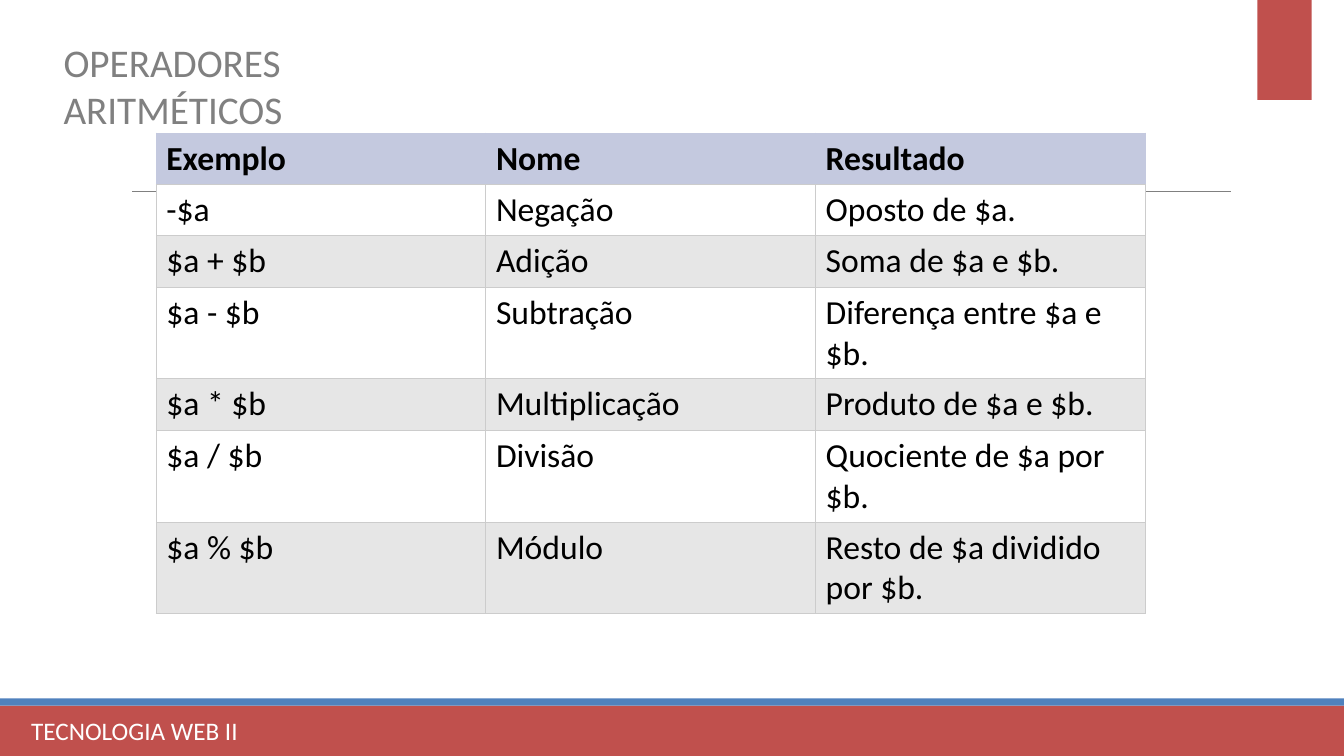
"""Build the slide on arithmetic operators."""
from dataclasses import dataclass

from lxml import etree
from pptx import Presentation
from pptx.dml.color import RGBColor
from pptx.enum import shapes, text
from pptx.oxml import ns
from pptx.util import Inches, Pt


@dataclass(frozen=True)
class Theme:
    font: str = "Calibri"
    red: str = "C0504D"
    blue: str = "4F81BD"
    gray: str = "808080"
    white: str = "FFFFFF"
    black: str = "000000"
    header: str = "C4C9DF"
    band: str = "E6E6E6"
    border: str = "CCCCCC"
    title_size: int = 28
    table_size: int = 24
    footer_size: int = 18


THEME = Theme()
BARS = [
    (0, 7, 13.33, 0.5, THEME.red),
    (0, 6.93, 13.33, 0.07, THEME.blue),
    (12.47, 0, 0.54, 0.99, THEME.red),
]
OPERATORS = [
    ("Exemplo", "Nome", "Resultado"),
    ("-$a", "Negação", "Oposto de $a."),
    ("$a + $b", "Adição", "Soma de $a e $b."),
    ("$a - $b", "Subtração", "Diferença entre $a e $b."),
    ("$a * $b", "Multiplicação", "Produto de $a e $b."),
    ("$a / $b", "Divisão", "Quociente de $a por $b."),
    ("$a % $b", "Módulo", "Resto de $a dividido por $b."),
]
COL_WIDTH, ROW_HEIGHT, TALL_ROW = 3.27, 0.51, 0.91
TWO_LINE_ROWS = {3, 5, 6}


def rgb(color):
    return RGBColor.from_string(color)


def write(tf, content, size, color, bold=False):
    p = tf.paragraphs[0]
    p.alignment = text.PP_ALIGN.LEFT
    r = p.add_run()
    r.text = content
    formats = {"name": THEME.font, "size": Pt(size), "bold": bold}
    for name, value in formats.items():
        setattr(r.font, name, value)
    r.font.color.rgb = rgb(color)


def add_bar(s, left, top, width, height, color):
    sp = s.shapes.add_shape(shapes.MSO_SHAPE.RECTANGLE, Inches(left), Inches(top),
                            Inches(width), Inches(height))
    sp.shadow.inherit = False
    sp.fill.solid()
    sp.fill.fore_color.rgb = rgb(color)
    sp.line.fill.background()


def add_rule(s, left, right, y):
    line = s.shapes.add_connector(shapes.MSO_CONNECTOR.STRAIGHT, Inches(left),
                                  Inches(y), Inches(right), Inches(y))
    line.line.color.rgb = rgb(THEME.gray)
    line.line.width = Pt(0.5)
    etree.SubElement(line.element.spPr, ns.qn("a:effectLst"))


def add_footer(s, content):
    sp = s.shapes.add_textbox(Inches(0.21), Inches(7.05), Inches(7.11), Inches(0.4))
    sp.text_frame.word_wrap = True
    write(sp.text_frame, content, THEME.footer_size, THEME.white)


def set_title(s, content):
    sp = s.shapes.title
    box = {"left": 0.53, "top": 0.33, "width": 4.55, "height": 0.57}
    for name, value in box.items():
        setattr(sp, name, Inches(value))
    tf = sp.text_frame
    formats = {"word_wrap": False, "auto_size": text.MSO_AUTO_SIZE.NONE,
               "vertical_anchor": text.MSO_ANCHOR.TOP}
    for name, value in formats.items():
        setattr(tf, name, value)
    write(tf, content, THEME.title_size, THEME.gray)


def set_borders(cell, side_color):
    tc_pr = cell._tc.get_or_add_tcPr()
    colors = {"lnL": side_color, "lnR": side_color, "lnT": side_color, "lnB": THEME.border}
    for side, color in colors.items():
        ln = etree.SubElement(tc_pr, ns.qn(f"a:{side}"), w=str(Pt(0.75)))
        fill = etree.SubElement(ln, ns.qn("a:solidFill"))
        etree.SubElement(fill, ns.qn("a:srgbClr"), val=color)


def format_cell(cell, content, row):
    header = row == 0
    set_borders(cell, THEME.header if header else THEME.border)
    cell.fill.solid()
    band = THEME.white if row % 2 else THEME.band
    cell.fill.fore_color.rgb = rgb(THEME.header if header else band)
    write(cell.text_frame, content, THEME.table_size, THEME.black, header)


def add_operator_table(s, rows):
    heights = [TALL_ROW if i in TWO_LINE_ROWS else ROW_HEIGHT for i in range(len(rows))]
    cols = len(rows[0])
    table = s.shapes.add_table(len(rows), cols, Inches(1.55), Inches(1.32),
                               Inches(COL_WIDTH * cols), Inches(sum(heights))).table
    table.horz_banding = False
    for col in table.columns:
        col.width = Inches(COL_WIDTH)
    for i, (values, height) in enumerate(zip(rows, heights)):
        table.rows[i].height = Inches(height)
        for j, content in enumerate(values):
            format_cell(table.cell(i, j), content, i)


def main():
    prs = Presentation()
    prs.slide_width, prs.slide_height = Inches(13.33), Inches(7.5)
    s = prs.slides.add_slide(prs.slide_layouts[5])
    add_rule(s, 1.31, 12.21, 1.9)
    for bar in BARS:
        add_bar(s, *bar)
    add_footer(s, "TECNOLOGIA WEB II")
    add_operator_table(s, OPERATORS)
    set_title(s, "OPERADORES ARITMÉTICOS")
    prs.save("out.pptx")


if __name__ == "__main__":
    main()
